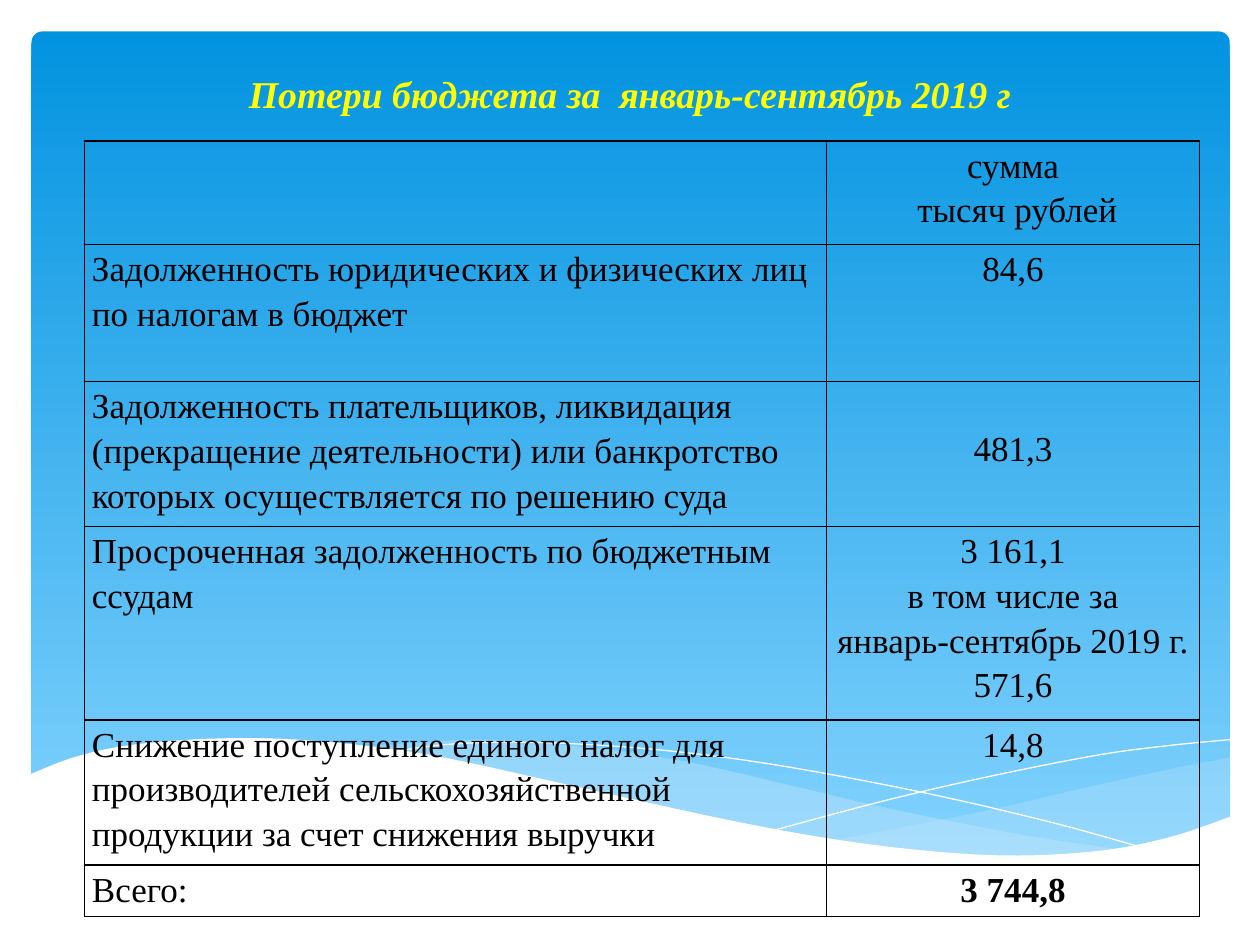
from lxml import etree
from pptx import Presentation
from pptx.dml.color import RGBColor
from pptx.enum import shapes, text
from pptx.oxml import ns
from pptx.util import Inches, Pt

FONT = "Times New Roman"
COLUMNS = [5.89, 2.96]
ROWS = [
    (0.82, "", ["сумма", " тысяч рублей"]),
    (1.09, "Задолженность юридических и физических лиц по налогам в бюджет", ["84,6"]),
    (1.09, "Задолженность плательщиков, ликвидация (прекращение деятельности) "
           "или банкротство которых осуществляется по решению суда", ["481,3"]),
    (1.45, "Просроченная задолженность по бюджетным ссудам",
     ["3 161,1", " в том числе за ", "январь-сентябрь 2019 г. ", "571,6"]),
    (1.09, "Снижение поступление единого налог для производителей "
           "сельскохозяйственной продукции за счет снижения выручки", ["14,8"]),
    (0.41, "Всего:", ["3 744,8"]),
]
MIDDLE_ROW = 2
TOTAL_ROW = len(ROWS) - 1

RIGHT_BAND = [
    [(9.77, 6.01), (9.36, 6.09), (8.62, 6.25), (7.8, 6.44), (6.62, 6.67)],
    [(6.62, 6.67), (7.33, 6.76), (8.04, 6.8), (8.73, 6.76), (9.29, 6.65), (9.77, 6.49)],
]
LONG_BAND = [
    [(8.94, 6.75), (8.08, 6.62), (7.07, 6.42), (6.3, 6.24), (5.42, 6.04), (4.65, 5.93),
     (3.8, 5.87), (2.87, 5.93)],
    [(2.87, 5.93), (3.63, 6.04), (4.5, 6.24), (5.67, 6.5), (6.66, 6.68), (7.49, 6.78),
     (8.19, 6.8), (8.94, 6.75)],
]
FALLING_LINE = [[(3.1, 5.97), (3.53, 5.91), (4.17, 5.89), (5.11, 5.94), (6.09, 6.06),
                 (7.28, 6.28), (8.32, 6.52), (9.08, 6.73)]]
RISING_LINE = [[(6.14, 6.59), (6.96, 6.37), (7.77, 6.18), (8.67, 6), (9.25, 5.92), (9.76, 5.87)]]
WHITE_WAVE = [
    [(9.77, 6.48), (9.3, 6.64), (8.75, 6.75), (8.09, 6.79), (7.44, 6.76), (6.68, 6.67),
     (5.79, 6.51), (4.47, 6.22), (3.4, 5.99), (2.5, 5.88), (1.77, 5.86), (1.06, 5.91),
     (0.59, 6.01), (0.23, 6.15)],
    [(0.23, 7.31), (9.77, 7.31)],
]


def color(value):
    return RGBColor.from_string(value)


def smooth(knots, steps=6):
    """Points of a Catmull-Rom curve through the knots."""
    if len(knots) < 3:
        return knots
    padded = [knots[0], *knots, knots[-1]]
    points = [knots[0]]
    for a, b, c, d in zip(padded, padded[1:], padded[2:], padded[3:]):
        for step in range(1, steps + 1):
            t = step / steps
            points.append(tuple(
                (2 * q + (r - p) * t + (2 * p - 5 * q + 4 * r - s) * t ** 2
                 + (3 * q - p - 3 * r + s) * t ** 3) / 2
                for p, q, r, s in zip(a, b, c, d)))
    return points


def add_curve(page, edges, fill=None, alpha=100, line=None):
    points = [(Inches(x), Inches(y)) for edge in edges for x, y in smooth(edge)]
    builder = page.shapes.build_freeform(*points[0], scale=1.0)
    builder.add_line_segments(points[1:], close=fill is not None)
    shape = builder.convert_to_shape()
    shape.shadow.inherit = False
    if fill:
        shape.fill.solid()
        shape.fill.fore_color.rgb = color(fill)
        tone = shape.fill._xPr.find(".//" + ns.qn("a:srgbClr"))
        etree.SubElement(tone, ns.qn("a:alpha"), val=str(alpha * 1000))
    else:
        shape.fill.background()
    if line:
        shape.line.color.rgb = color(line)
        shape.line.width = Pt(0)
    else:
        shape.line.fill.background()


def add_backdrop(page):
    panel = page.shapes.add_shape(shapes.MSO_SHAPE.ROUNDED_RECTANGLE,
                                  Inches(0.25), Inches(0.25), Inches(9.51), Inches(6.6))
    panel.adjustments[0] = 0.013
    panel.shadow.inherit = False
    panel.line.fill.background()
    panel.fill.gradient()
    panel.fill.gradient_angle = 270
    for stop, position, value in zip(panel.fill.gradient_stops, (0, 1), ("0293E0", "83D3FE")):
        stop.position = position
        stop.color.rgb = color(value)
    add_curve(page, RIGHT_BAND, fill="C6E7FC", alpha=29)
    add_curve(page, LONG_BAND, fill="C6E7FC", alpha=40)
    add_curve(page, FALLING_LINE, line="FFFFFF")
    add_curve(page, RISING_LINE, line="FFFFFF")
    add_curve(page, WHITE_WAVE, fill="FFFFFF")


def write(para, words, value, **formats):
    span = para.add_run()
    span.text = words
    span.font.color.rgb = color(value)
    for name, setting in {"name": FONT, **formats}.items():
        setattr(span.font, name, setting)


def add_title(page):
    box = page.shapes.add_textbox(0, Inches(0.44), Inches(10), Inches(0.6))
    frame = box.text_frame
    frame.word_wrap = True
    frame.vertical_anchor = text.MSO_ANCHOR.MIDDLE
    para = frame.paragraphs[0]
    para.alignment = text.PP_ALIGN.CENTER
    write(para, "Потери бюджета за  январь-сентябрь 2019 г", "FFFF00",
          size=Pt(21.6), bold=True, italic=True)


def add_borders(cell):
    properties = cell._tc.get_or_add_tcPr()
    for side in ("lnL", "lnR", "lnT", "lnB"):
        line = etree.SubElement(properties, ns.qn("a:" + side), w=str(Pt(1)))
        fill = etree.SubElement(line, ns.qn("a:solidFill"))
        etree.SubElement(fill, ns.qn("a:srgbClr"), val="000000")


def fill_cell(cell, lines, align, bold=False):
    for name, size in {"left": 0.06, "right": 0.06, "top": 0, "bottom": 0}.items():
        setattr(cell, "margin_" + name, Inches(size))
    add_borders(cell)
    cell.fill.background()
    frame = cell.text_frame
    for index, words in enumerate(lines):
        para = frame.add_paragraph() if index else frame.paragraphs[0]
        para.alignment = align
        para.line_spacing = 1.15
        if words:
            write(para, words, "000000", size=Pt(20), bold=bold)


def add_losses_table(page):
    table = page.shapes.add_table(len(ROWS), len(COLUMNS), Inches(0.67), Inches(1.12),
                                  Inches(sum(COLUMNS)),
                                  Inches(sum(row[0] for row in ROWS))).table
    table.first_row = table.horz_banding = False
    for column, width in zip(table.columns, COLUMNS):
        column.width = Inches(width)
    for index, (height, label, amount) in enumerate(ROWS):
        table.rows[index].height = Inches(height)
        fill_cell(table.cell(index, 0), [label], text.PP_ALIGN.LEFT)
        fill_cell(table.cell(index, 1), amount, text.PP_ALIGN.CENTER, index == TOTAL_ROW)
    middle = table.cell(MIDDLE_ROW, 1)
    middle.vertical_anchor = text.MSO_ANCHOR.MIDDLE
    middle.margin_bottom = Inches(0.12)


def main():
    deck = Presentation()
    deck.slide_width, deck.slide_height = Inches(10), Inches(7.5)
    page = deck.slides.add_slide(deck.slide_layouts[6])
    add_backdrop(page)
    add_title(page)
    add_losses_table(page)
    deck.save("out.pptx")


if __name__ == "__main__":
    main()
